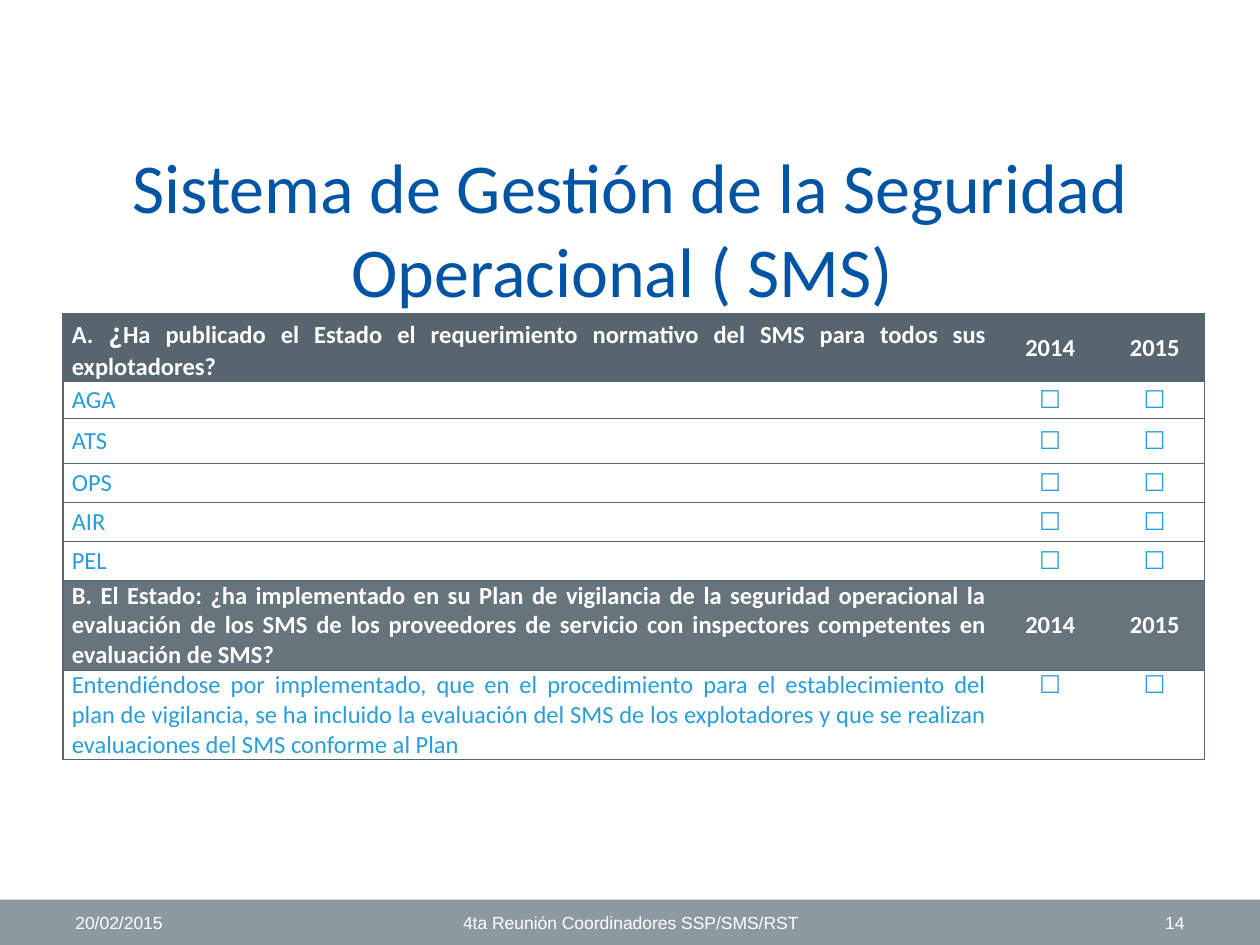
from lxml import etree
from pptx import Presentation
from pptx.dml.color import RGBColor
from pptx.enum.shapes import MSO_SHAPE as Shape
from pptx.enum.text import MSO_ANCHOR as Anchor, PP_ALIGN as Align
from pptx.oxml.ns import qn
from pptx.util import Inches, Pt

BLUE, SKY, WHITE = "0054A4", "279DD9", "FFFFFF"
SLATE, STEEL, FOOTER = "57666E", "66747C", "8C99A1"
BOX = "☐"
QUESTION_A = [
    ("A. ", 14),
    ("¿", 18),
    ("Ha publicado el Estado el requerimiento normativo del SMS para todos sus explotadores?", 14),
]
QUESTION_B = [(
    "B. El Estado: ¿ha implementado en su Plan de vigilancia de la seguridad operacional "
    "la evaluación de los SMS de los proveedores de servicio con inspectores competentes "
    "en evaluación de SMS?", 14)]
CRITERION = [(
    "Entendiéndose por implementado, que en el procedimiento para el establecimiento del "
    "plan de vigilancia, se ha incluido la evaluación del SMS de los explotadores y que se "
    "realizan evaluaciones del SMS conforme al Plan", 14)]
AREAS = [("AGA", 0.29), ("ATS", 0.36), ("OPS", 0.31), ("AIR", 0.31), ("PEL", 0.31)]


def color(value):
    return RGBColor.from_string(value)


def write(frame, pieces, font="Calibri", tint=WHITE, bold=False, align=Align.LEFT):
    para = frame.paragraphs[0]
    para.alignment = align
    for text, size in pieces:
        span = para.add_run()
        span.text = text
        span.font.name = font
        span.font.size = Pt(size)
        span.font.bold = bold
        span.font.color.rgb = color(tint)


def set_borders(cell, visible):
    properties = cell._tc.get_or_add_tcPr()
    for index, side in enumerate("LRTB"):
        line = etree.Element(qn(f"a:ln{side}"), w=str(Pt(0.75)))
        if side in visible:
            fill = etree.SubElement(line, qn("a:solidFill"))
            etree.SubElement(fill, qn("a:srgbClr"), val=SLATE)
        else:
            etree.SubElement(line, qn("a:noFill"))
        properties.insert(index, line)


class SlideBuilder:
    """Holds the style and the current slide, and adds each kind of element."""

    def __init__(self, page):
        self.page = page

    def bar(self, left, top, width, height, fill):
        shape = self.page.shapes.add_shape(
            Shape.RECTANGLE, Inches(left), Inches(top), Inches(width), Inches(height))
        shape.shadow.inherit = False
        shape.fill.solid()
        shape.fill.fore_color.rgb = color(fill)
        shape.line.fill.background()

    def text(self, left, top, width, height, text, size, anchor=Anchor.MIDDLE, **style):
        box = self.page.shapes.add_textbox(
            Inches(left), Inches(top), Inches(width), Inches(height))
        frame = box.text_frame
        frame.word_wrap = True
        frame.vertical_anchor = anchor
        write(frame, [(text, size)], **style)

    def cell(self, cell, pieces, fill, borders, anchor, **style):
        cell.margin_left = cell.margin_right = Inches(0.07)
        cell.margin_top = cell.margin_bottom = 0
        cell.vertical_anchor = anchor
        cell.fill.solid()
        cell.fill.fore_color.rgb = color(fill)
        set_borders(cell, borders)
        write(cell.text_frame, pieces, **style)

    def table(self, left, top, widths, rows):
        height = sum(row["height"] for row in rows)
        table = self.page.shapes.add_table(
            len(rows), len(widths), Inches(left), Inches(top),
            Inches(sum(widths)), Inches(height)).table
        table.first_row = table.horz_banding = False
        for column, width in zip(table.columns, widths):
            column.width = Inches(width)
        sides = ["LTB", "TB", "RTB"]
        for index, row in enumerate(rows):
            table.rows[index].height = Inches(row["height"])
            header = row["fill"] != WHITE
            for number, (pieces, borders) in enumerate(zip(row["cells"], sides)):
                self.cell(
                    table.cell(index, number), pieces, row["fill"], borders,
                    row["mark_anchor"] if number else Anchor.MIDDLE,
                    tint=WHITE if header else SKY, bold=header,
                    align=Align.CENTER if number else Align.JUSTIFY)


def header_row(question, height, fill):
    cells = [question, [("2014", 14)], [("2015", 14)]]
    return dict(cells=cells, height=height, fill=fill, mark_anchor=Anchor.MIDDLE)


def check_row(label, height, mark_anchor=Anchor.MIDDLE):
    cells = [label, [(BOX, 14)], [(BOX, 14)]]
    return dict(cells=cells, height=height, fill=WHITE, mark_anchor=mark_anchor)


def main():
    deck = Presentation()
    deck.slide_width, deck.slide_height = Inches(10), Inches(7.5)
    builder = SlideBuilder(deck.slides.add_slide(deck.slide_layouts[6]))

    builder.bar(0, 7.14, 10, 0.36, FOOTER)
    builder.text(0.5, 1.09, 9, 1.25, "Sistema de Gestión de la Seguridad Operacional ( SMS) ",
                 40, anchor=Anchor.TOP, tint=BLUE, align=Align.CENTER)
    for left, width, text, align in [
        (0.5, 2.33, "20/02/2015", Align.LEFT),
        (3.42, 3.17, "4ta Reunión Coordinadores SSP/SMS/RST", Align.CENTER),
        (7.17, 2.33, "14", Align.RIGHT),
    ]:
        builder.text(left, 7.14, width, 0.36, text, 10, font="Arial", align=align)

    rows = [header_row(QUESTION_A, 0.54, SLATE)]
    rows += [check_row([(area, 14)], height) for area, height in AREAS]
    rows += [header_row(QUESTION_B, 0.71, STEEL), check_row(CRITERION, 0.71, Anchor.TOP)]
    builder.table(0.5, 2.49, [7.4, 0.87, 0.79], rows)

    deck.save("out.pptx")


if __name__ == "__main__":
    main()
